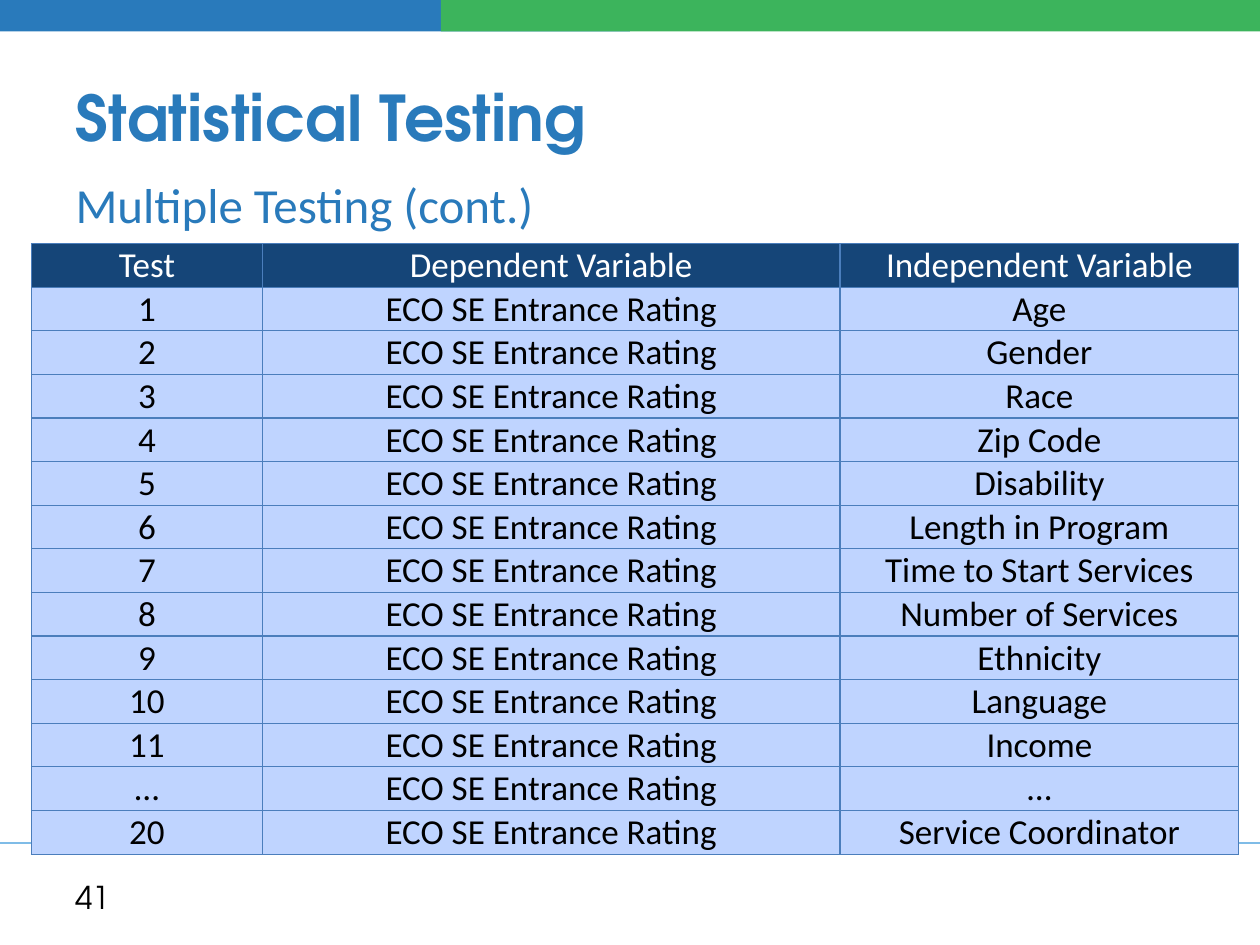
from dataclasses import dataclass
from typing import Any

from lxml.etree import SubElement
from pptx import Presentation
from pptx.dml.color import RGBColor
from pptx.enum.shapes import MSO_CONNECTOR, MSO_SHAPE
from pptx.enum.text import MSO_ANCHOR, MSO_AUTO_SIZE, PP_ALIGN
from pptx.oxml.ns import qn
from pptx.util import Inches, Pt

UNIT = Inches(10) // 120


@dataclass(frozen=True)
class Theme:
    blue: str = "297ABB"
    green: str = "3CB45C"
    rule: str = "7FBCE7"
    header: str = "154578"
    cell: str = "BFD4FF"
    border: str = "4B7EBC"
    white: str = "FFFFFF"
    black: str = "000000"
    heading_font: str = "TeX Gyre Adventor"
    body_font: str = "Calibri"
    title_size: int = 36
    body_size: int = 28
    table_size: int = 20
    number_size: int = 18
    rule_width: float = 1.5
    border_width: float = 0.75


@dataclass(frozen=True)
class Area:
    column: float
    row: float
    columns: float
    rows: float

    def lengths(self) -> tuple[int, ...]:
        return tuple(round(value * UNIT) for value in (self.column, self.row, self.columns, self.rows))


@dataclass(frozen=True)
class TextStyle:
    font: str
    size: int
    color: str
    bold: bool = False
    alignment: PP_ALIGN = PP_ALIGN.LEFT


@dataclass(frozen=True)
class Band:
    area: Area
    color: str


THEME = Theme()
TITLE = TextStyle(THEME.heading_font, THEME.title_size, THEME.blue, bold=True)
SUBTITLE = TextStyle(THEME.body_font, THEME.body_size, THEME.blue)
NUMBER = TextStyle(THEME.heading_font, THEME.number_size, THEME.black)
HEADER = TextStyle(THEME.body_font, THEME.table_size, THEME.white, alignment=PP_ALIGN.CENTER)
ENTRY = TextStyle(THEME.body_font, THEME.table_size, THEME.black, alignment=PP_ALIGN.CENTER)

BANDS = (
    Band(Area(0, -15, 60, 18), THEME.blue),
    Band(Area(42, -15, 78, 18), THEME.green),
)
RULE_ROW = 80.28
TABLE_COLUMNS = (22, 55, 38)
TABLE_ROW = 4
HEADINGS = ("Test", "Dependent Variable", "Independent Variable")
DEPENDENT = "ECO SE Entrance Rating"
TESTS = (*map(str, range(1, 12)), "…", "20")
INDEPENDENT = (
    "Age", "Gender", "Race", "Zip Code", "Disability", "Length in Program",
    "Time to Start Services", "Number of Services", "Ethnicity", "Language",
    "Income", "…", "Service Coordinator",
)


def apply(target: Any, values: dict[str, Any]) -> None:
    for name, value in values.items():
        setattr(target, name, value)


def write(frame: Any, text: str, style: TextStyle) -> None:
    para = frame.paragraphs[0]
    para.alignment = style.alignment
    span = para.add_run()
    span.text = text
    apply(span.font, {"name": style.font, "size": Pt(style.size), "bold": style.bold})
    span.font.color.rgb = RGBColor.from_string(style.color)


def place_text(box: Any, area: Area, text: str, style: TextStyle, anchor: MSO_ANCHOR) -> None:
    apply(box, dict(zip(("left", "top", "width", "height"), area.lengths())))
    apply(box.text_frame, {
        "word_wrap": True, "auto_size": MSO_AUTO_SIZE.NONE, "vertical_anchor": anchor,
    })
    write(box.text_frame, text, style)


def remove_bullet(para: Any) -> None:
    properties = para._p.get_or_add_pPr()
    for name in ("marL", "indent"):
        properties.set(name, "0")
    SubElement(properties, qn("a:buNone"))


def draw_band(page: Any, band: Band) -> None:
    box = page.shapes.add_shape(MSO_SHAPE.RECTANGLE, *band.area.lengths())
    box.shadow.inherit = False
    box.fill.solid()
    box.fill.fore_color.rgb = RGBColor.from_string(band.color)
    box.line.fill.background()


def draw_rule(page: Any, row: float) -> None:
    height = round(row * UNIT)
    rule = page.shapes.add_connector(MSO_CONNECTOR.STRAIGHT, 0, height, 120 * UNIT, height)
    rule.line.color.rgb = RGBColor.from_string(THEME.rule)
    rule.line.width = Pt(THEME.rule_width)
    SubElement(rule._element.spPr, qn("a:effectLst"))


def draw_borders(cell: Any) -> None:
    properties = cell._tc.get_or_add_tcPr()
    for side in ("L", "R", "T", "B"):
        border = SubElement(properties, qn(f"a:ln{side}"), w=str(Pt(THEME.border_width)))
        fill = SubElement(border, qn("a:solidFill"))
        SubElement(fill, qn("a:srgbClr"), val=THEME.border)


def fill_cell(cell: Any, text: str, style: TextStyle, color: str) -> None:
    apply(cell, {
        "margin_left": Inches(0.01), "margin_right": Inches(0.01),
        "margin_top": Pt(0.4), "margin_bottom": 0,
        "vertical_anchor": MSO_ANCHOR.BOTTOM,
    })
    draw_borders(cell)
    cell.fill.solid()
    cell.fill.fore_color.rgb = RGBColor.from_string(color)
    write(cell.text_frame, text, style)


def draw_table(page: Any) -> None:
    rows = [HEADINGS, *((test, DEPENDENT, variable) for test, variable in zip(TESTS, INDEPENDENT))]
    area = Area(3, 23.2, sum(TABLE_COLUMNS), TABLE_ROW * len(rows))
    table = page.shapes.add_table(len(rows), len(HEADINGS), *area.lengths()).table
    for column, width in zip(table.columns, TABLE_COLUMNS):
        column.width = width * UNIT
    for index, (row, texts) in enumerate(zip(table.rows, rows)):
        row.height = TABLE_ROW * UNIT
        style, color = (ENTRY, THEME.cell) if index else (HEADER, THEME.header)
        for cell, text in zip(row.cells, texts):
            fill_cell(cell, text, style, color)


def main() -> None:
    deck = Presentation()
    apply(deck, {"slide_width": Inches(10), "slide_height": Inches(7.5)})
    page = deck.slides.add_slide(deck.slide_layouts[1])
    draw_rule(page, RULE_ROW)
    for band in BANDS:
        draw_band(page, band)
    body = page.placeholders[1]
    place_text(body, Area(6, 16, 108, 53), "Multiple Testing (cont.)", SUBTITLE, MSO_ANCHOR.TOP)
    remove_bullet(body.text_frame.paragraphs[0])
    place_text(page.shapes.title, Area(6, 3.6, 108, 15), "Statistical Testing", TITLE, MSO_ANCHOR.MIDDLE)
    number_area = Area(6, 83, 28, 4.8)
    number = page.shapes.add_textbox(*number_area.lengths())
    place_text(number, number_area, "41", NUMBER, MSO_ANCHOR.MIDDLE)
    draw_table(page)
    deck.save("out.pptx")


if __name__ == "__main__":
    main()
